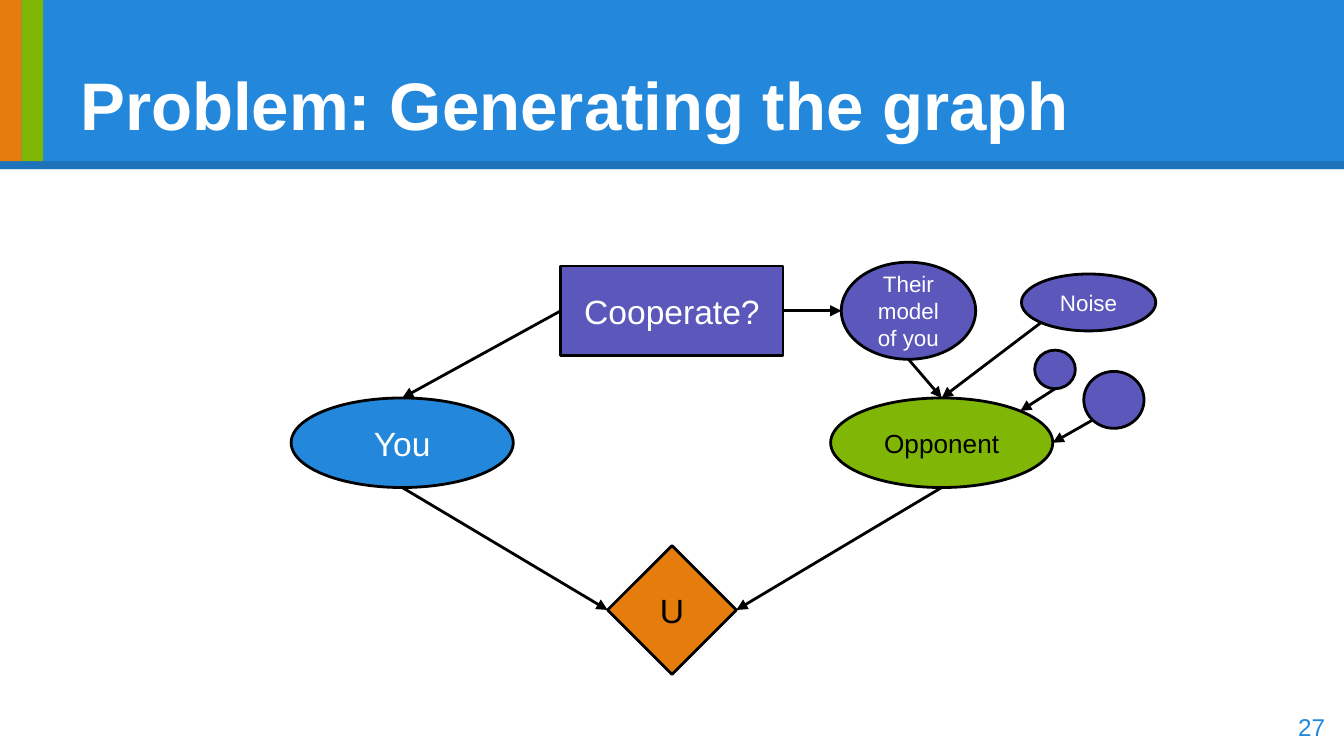
import pptx
import pptx.dml.color
import pptx.enum.shapes
import pptx.enum.text
import pptx.oxml.ns
import pptx.util
import lxml.etree

Pt = pptx.util.Pt
RGBColor = pptx.dml.color.RGBColor
Kind = pptx.enum.shapes.MSO_SHAPE
Align = pptx.enum.text.PP_ALIGN
Anchor = pptx.enum.text.MSO_ANCHOR
qn = pptx.oxml.ns.qn

WHITE = RGBColor(0xFF, 0xFF, 0xFF)
BLACK = RGBColor(0x00, 0x00, 0x00)
BLUE = RGBColor(0x23, 0x88, 0xDB)
GREEN = RGBColor(0x80, 0xB6, 0x06)
ORANGE = RGBColor(0xE6, 0x7C, 0x0B)
PURPLE = RGBColor(0x5B, 0x57, 0xBB)

WIDTH, HEIGHT = 720, 405
NODE_SIZE = (119, 48)
TOP, LEFT, BOTTOM, RIGHT = (0.5, 0), (0, 0.5), (0.5, 1), (1, 0.5)
UPPER_RIGHT, LOWER_LEFT = (0.854, 0.146), (0.146, 0.854)


def write_text(frame, text, size=18, color=WHITE, bold=False,
               align=Align.CENTER, anchor=Anchor.MIDDLE):
    frame.word_wrap = True
    frame.vertical_anchor = anchor
    frame.margin_left = frame.margin_right = Pt(7.2)
    frame.margin_top = frame.margin_bottom = Pt(7.2)
    para = frame.paragraphs[0]
    para.alignment = align
    span = para.add_run()
    span.text = text
    span.font.name = "Arial"
    span.font.size = Pt(size)
    span.font.bold = bold
    span.font.color.rgb = color


class Page:
    line_width = 1.5
    line_color = BLACK

    def __init__(self, deck):
        self.shapes = deck.slides.add_slide(deck.slide_layouts[6]).shapes

    def block(self, left, top, width, height, fill, kind=Kind.RECTANGLE):
        box = self.shapes.add_shape(kind, Pt(left), Pt(top), Pt(width), Pt(height))
        box.shadow.inherit = False
        box.fill.solid()
        box.fill.fore_color.rgb = fill
        box.line.fill.background()
        return box

    def node(self, left, top, width, height, fill, text="", kind=Kind.OVAL, **style):
        box = self.block(left, top, width, height, fill, kind)
        box.line.color.rgb = self.line_color
        box.line.width = Pt(self.line_width)
        if text:
            write_text(box.text_frame, text, **style)
        return box

    def label(self, left, top, width, height, text, **style):
        box = self.shapes.add_textbox(Pt(left), Pt(top), Pt(width), Pt(height))
        write_text(box.text_frame, text, **style)

    def line(self, start, end, width):
        line = self.shapes.add_connector(
            pptx.enum.shapes.MSO_CONNECTOR.STRAIGHT, *start, *end)
        line.line.color.rgb = self.line_color
        line.line.width = Pt(width)
        lxml.etree.SubElement(line._element.spPr, qn("a:effectLst"))
        return line

    def rule(self, top, width, opacity):
        line = self.line((Pt(0), Pt(top)), (Pt(WIDTH), Pt(top)), width)
        color = line._element.spPr.find(".//" + qn("a:srgbClr"))
        lxml.etree.SubElement(color, qn("a:alpha"), val=str(opacity * 1000))

    def arrow(self, source, source_site, target, target_site):
        start, end = (
            (round(box.left + box.width * across), round(box.top + box.height * down))
            for box, (across, down) in ((source, source_site), (target, target_site)))
        line = self.line(start, end, self.line_width)
        lxml.etree.SubElement(line.line._get_or_add_ln(), qn("a:tailEnd"), type="triangle")


def main():
    deck = pptx.Presentation()
    deck.slide_width, deck.slide_height = Pt(WIDTH), Pt(HEIGHT)
    page = Page(deck)

    page.block(0, 0, WIDTH, 90.7, BLUE)
    page.rule(88.5, 4.5, opacity=15)
    for index, color in enumerate((ORANGE, GREEN)):
        page.block(index * 11.6, 0, 11.6, 86.4, color)
    page.label(36, 16.5, 648, 67.7, "Problem: Generating the graph", size=36,
               bold=True, align=Align.LEFT, anchor=Anchor.BOTTOM)

    cooperate = page.node(300.5, 142.5, *NODE_SIZE, PURPLE, "Cooperate?",
                          kind=Kind.RECTANGLE)
    you = page.node(156, 213.2, *NODE_SIZE, BLUE, "You")
    opponent = page.node(445, 213.2, *NODE_SIZE, GREEN, "Opponent", size=14, color=BLACK)
    utility = page.node(325.5, 292.3, 69, 69, ORANGE, "U", kind=Kind.DIAMOND, color=BLACK)
    model = page.node(450.7, 140.5, 72, 52, PURPLE, "Their model of you", size=12)
    noise = page.node(547.2, 146.8, 72, 30.5, PURPLE, "Noise", size=12)
    small_factor = page.node(554.3, 187.6, 21.8, 20.7, PURPLE)
    large_factor = page.node(580.6, 199, 32.3, 30.5, PURPLE)

    for source, source_site, target, target_site in (
            (you, BOTTOM, utility, LEFT),
            (opponent, BOTTOM, utility, RIGHT),
            (cooperate, LEFT, you, TOP),
            (cooperate, RIGHT, model, LEFT),
            (model, BOTTOM, opponent, TOP),
            (noise, LOWER_LEFT, opponent, TOP),
            (small_factor, BOTTOM, opponent, UPPER_RIGHT),
            (large_factor, LOWER_LEFT, opponent, RIGHT)):
        page.arrow(source, source_site, target, target_site)

    page.label(673.7, 373.9, 43.2, 31, "27", size=13, color=BLUE, align=Align.RIGHT)
    deck.save("out.pptx")


if __name__ == "__main__":
    main()
